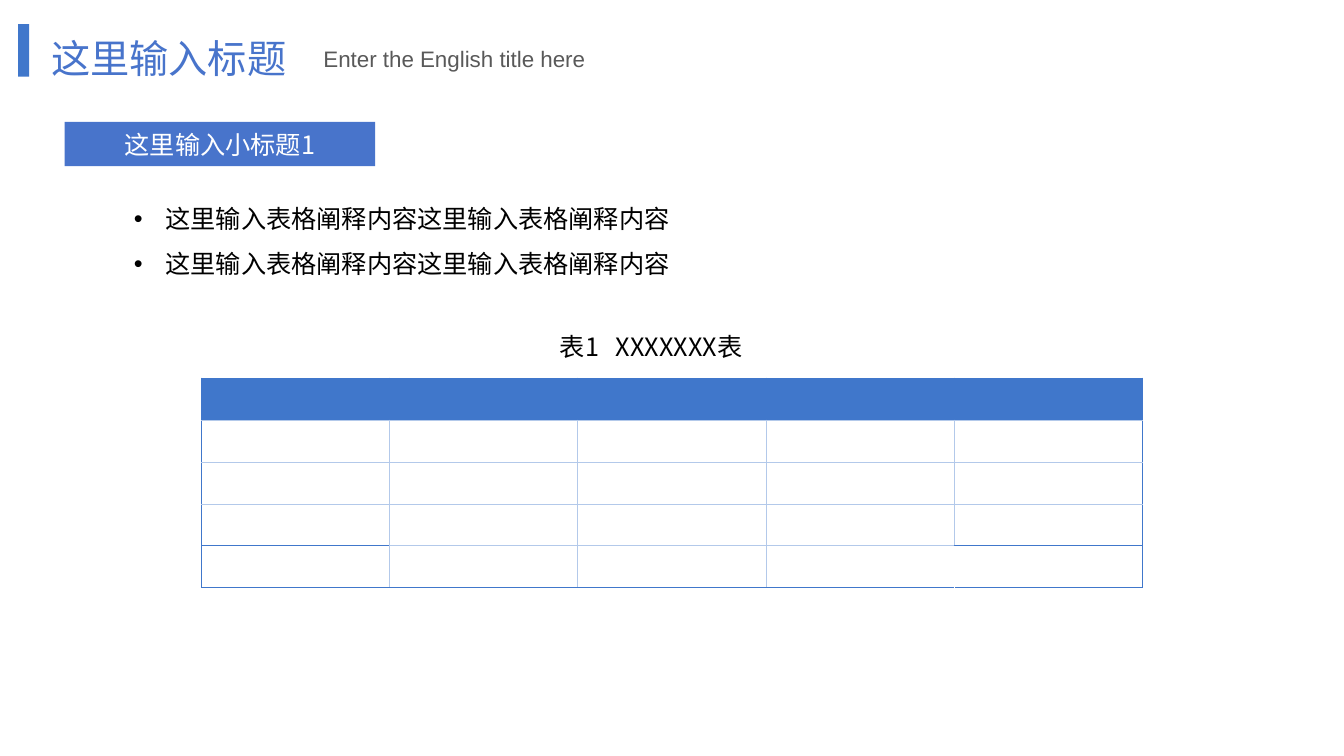
"""Build a title slide section with a subtitle, bullets and a captioned table."""
from dataclasses import dataclass

from lxml import etree
from pptx import Presentation
from pptx.dml.color import RGBColor
from pptx.enum import shapes, text
from pptx.oxml import ns
from pptx.util import Pt

BLUE = RGBColor(0x48, 0x74, 0xCB)
TABLE_BLUE = RGBColor(0x40, 0x77, 0xCB)
PALE_BLUE = RGBColor(0xB3, 0xC9, 0xEA)
GREY = RGBColor(0x59, 0x59, 0x59)
BLACK = RGBColor(0, 0, 0)
WHITE = RGBColor(0xFF, 0xFF, 0xFF)
HAN_FONT = "Noto Sans CJK SC"
LATIN_FONT = "Arial"
ROWS, COLUMNS = 5, 5
ROW_HEIGHT, COLUMN_WIDTH = 30, 134.4


@dataclass(frozen=True)
class Place:
    left: float
    top: float
    width: float
    height: float

    def lengths(self) -> tuple:
        return Pt(self.left), Pt(self.top), Pt(self.width), Pt(self.height)


@dataclass(frozen=True)
class Label:
    place: Place
    lines: tuple
    size: float
    color: RGBColor
    font: str = HAN_FONT
    align: text.PP_ALIGN = text.PP_ALIGN.LEFT
    spacing: float = 1.0
    bullet: str = ""


TITLE = Label(Place(29.5, -4.3, 298.8, 66.2), ("这里输入标题",), 28, BLUE, spacing=1.75)
LABELS = (
    Label(Place(223.9, 28.8, 395.3, 26.6), ("Enter the English title here",), 16, GREY, LATIN_FONT),
    Label(Place(88.6, 131, 440.6, 105.1), ("这里输入表格阐释内容这里输入表格阐释内容",) * 2,
          18, BLACK, LATIN_FONT, spacing=1.5, bullet="•"),
)
CAPTION = Label(Place(244.8, 222.5, 440.6, 39.6), ("表1 XXXXXXX表",), 18, BLACK,
                align=text.PP_ALIGN.CENTER, spacing=1.5)
SUBTITLE = Label(Place(46.1, 87.1, 221.8, 31.7), ("这里输入小标题1",), 18, WHITE,
                 align=text.PP_ALIGN.CENTER)
ACCENT = Place(13, 17.3, 7.9, 37.4)
TABLE = Place(144, 270, COLUMNS * COLUMN_WIDTH, ROWS * ROW_HEIGHT)


def format_span(span, label: Label) -> None:
    span.font.size = Pt(label.size)
    span.font.name = label.font
    span.font.color.rgb = label.color
    etree.SubElement(span.font._element, ns.qn("a:ea"), typeface=HAN_FONT)


def add_bullet(para, bullet: str) -> None:
    properties = para._p.get_or_add_pPr()
    properties.set("marL", str(Pt(22.5)))
    properties.set("indent", str(-Pt(22.5)))
    etree.SubElement(properties, ns.qn("a:buFont"), typeface=LATIN_FONT)
    etree.SubElement(properties, ns.qn("a:buChar"), char=bullet)


def write(frame, label: Label) -> None:
    frame.word_wrap = True
    frame.auto_size = text.MSO_AUTO_SIZE.NONE
    frame.text = "\n".join(label.lines)
    for para in frame.paragraphs:
        if label.bullet:
            add_bullet(para, label.bullet)
        para.alignment = label.align
        para.line_spacing = label.spacing
        para.space_before = Pt(0)
        for span in para.runs:
            format_span(span, label)


def add_label(page, label: Label):
    box = page.shapes.add_textbox(*label.place.lengths())
    write(box.text_frame, label)
    return box


def add_caption(page, label: Label) -> None:
    para = add_label(page, label).text_frame.paragraphs[0]
    number, name = label.lines[0].split(" ")
    para.runs[0].text = number
    for words in (" ", name):
        span = para.add_run()
        span.text = words
        format_span(span, label)
    para.runs[1].font._element.set("spc", "800")


def add_block(page, place: Place, color: RGBColor):
    block = page.shapes.add_shape(shapes.MSO_SHAPE.RECTANGLE, *place.lengths())
    block.shadow.inherit = False
    block.fill.solid()
    block.fill.fore_color.rgb = color
    block.line.fill.background()
    return block


def vertical_color(row: int, edge: int) -> RGBColor:
    if row == 0 or edge in (0, COLUMNS):
        return TABLE_BLUE
    return WHITE if (row, edge) == (ROWS - 1, COLUMNS - 1) else PALE_BLUE


def horizontal_color(edge: int, column: int) -> RGBColor:
    outer_cell = edge == ROWS - 1 and column in (0, COLUMNS - 1)
    return TABLE_BLUE if edge in (0, ROWS) or outer_cell else PALE_BLUE


def add_border(cell, side: str, color: RGBColor) -> None:
    line = etree.SubElement(cell._tc.get_or_add_tcPr(), ns.qn(f"a:ln{side}"), w=str(Pt(0.75)))
    fill = etree.SubElement(line, ns.qn("a:solidFill"))
    etree.SubElement(fill, ns.qn("a:srgbClr"), val=str(color))


def add_grid(page) -> None:
    table = page.shapes.add_table(ROWS, COLUMNS, *TABLE.lengths()).table
    for column in table.columns:
        column.width = Pt(COLUMN_WIDTH)
    for row in table.rows:
        row.height = Pt(ROW_HEIGHT)
    for row in range(ROWS):
        for column in range(COLUMNS):
            cell = table.cell(row, column)
            cell.margin_top = cell.margin_bottom = Pt(0)
            add_border(cell, "L", vertical_color(row, column))
            add_border(cell, "R", vertical_color(row, column + 1))
            add_border(cell, "T", horizontal_color(row, column))
            add_border(cell, "B", horizontal_color(row + 1, column))
            cell.fill.solid()
            cell.fill.fore_color.rgb = TABLE_BLUE if row == 0 else WHITE


def main() -> None:
    deck = Presentation()
    deck.slide_width, deck.slide_height = Pt(960), Pt(540)
    page = deck.slides.add_slide(deck.slide_layouts[5])
    title = page.shapes.title
    title.left, title.top, title.width, title.height = TITLE.place.lengths()
    write(title.text_frame, TITLE)
    title.text_frame.vertical_anchor = text.MSO_ANCHOR.TOP
    add_block(page, ACCENT, TABLE_BLUE)
    add_grid(page)
    subtitle = add_block(page, SUBTITLE.place, BLUE)
    write(subtitle.text_frame, SUBTITLE)
    subtitle.text_frame.vertical_anchor = text.MSO_ANCHOR.MIDDLE
    for label in LABELS:
        add_label(page, label)
    add_caption(page, CAPTION)
    deck.save("out.pptx")


if __name__ == "__main__":
    main()
